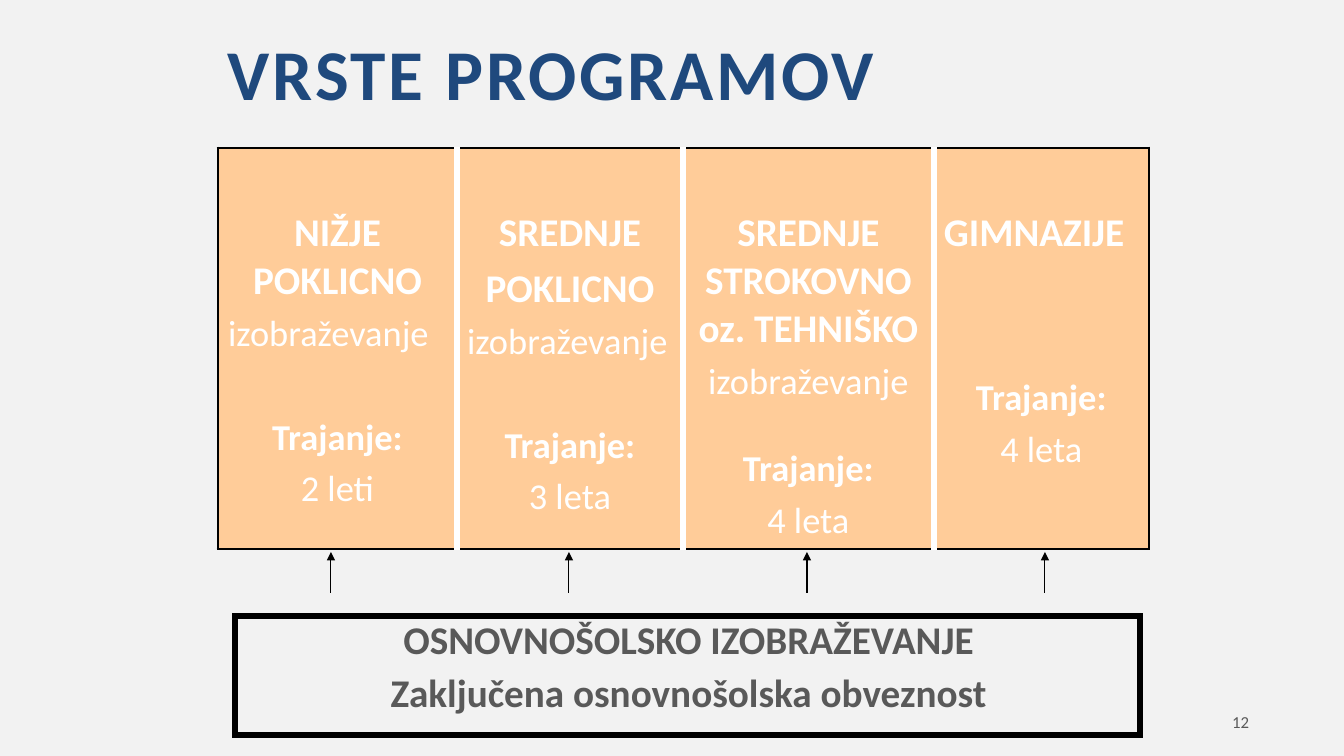
from lxml.etree import SubElement
from pptx import Presentation
from pptx.dml.color import RGBColor
from pptx.enum.shapes import MSO_CONNECTOR as Connector
from pptx.enum.text import MSO_ANCHOR as Anchor, PP_ALIGN as Align
from pptx.oxml.ns import qn
from pptx.util import Emu, Pt

COLORS = {"back": "F2F2F2", "title": "1F497D", "peach": "FFCC99",
          "white": "FFFFFF", "black": "000000", "gray": "595959"}
FONT = "Calibri"

HEAD = {"size": 28, "bold": True, "before": 8}
KIND = {"size": 26, "before": 7}
LABEL = {"size": 26, "bold": True}
YEARS = {"size": 26, "before": 7}
LEFT = {"align": Align.LEFT}

PROGRAMS = [
    (239, [("NIŽJE POKLICNO", HEAD), ("izobraževanje", KIND | LEFT),
           ("Trajanje:", LABEL | {"before": 59}), ("2 leti", YEARS)]),
    (226, [("SREDNJE", HEAD), ("POKLICNO", HEAD), ("izobraževanje", KIND | LEFT),
           ("Trajanje:", LABEL | {"before": 59}), ("3 leta", YEARS)]),
    (251, [("SREDNJE STROKOVNO oz. TEHNIŠKO", HEAD), ("izobraževanje", KIND),
           ("Trajanje:", LABEL | {"before": 43}), ("4 leta", YEARS)]),
    (215, [("GIMNAZIJE", HEAD | LEFT),
           ("Trajanje:", LABEL | {"before": 119}), ("4 leta", YEARS)]),
]
TITLE = [("VRSTE PROGRAMOV", LEFT | {"size": 51, "bold": True, "color": "title",
                                     "line": 0.9, "spacing": 200})]
BASIS_STYLE = {"size": 28, "bold": True, "color": "gray", "line": 0.9}
BASIS = [("OSNOVNOŠOLSKO IZOBRAŽEVANJE", BASIS_STYLE),
         ("Zaključena osnovnošolska obveznost", BASIS_STYLE | {"before": 10})]
NUMBER = [("12", {"size": 12, "color": "gray", "align": Align.RIGHT})]

TEXT_BOXES = [
    ((218, 30, 907, 110), TITLE, {"margin_top": 9}),
    ((228, 616, 921, 107), BASIS, {"margin_top": 5}),
    ((949, 703, 310, 38), NUMBER, {"vertical_anchor": Anchor.MIDDLE}),
]
PROGRAMS_AT = (218, 148, 931, 401)
BASIS_AT = (235, 616, 905, 119)
ARROW_START, ARROW_STEP, ARROW_FROM, ARROW_TO = 331, 238, 593, 552


def px(length):
    return Emu(round(length * 914400 / 100.8))


def rgb(name):
    return RGBColor.from_string(COLORS[name])


def write(frame, lines):
    frame.word_wrap = True
    for index, (words, style) in enumerate(lines):
        line = frame.add_paragraph() if index else frame.paragraphs[0]
        line.alignment = style.get("align", Align.CENTER)
        line.space_before = px(style.get("before", 0) if index else 0)
        line.line_spacing = style.get("line", 1.0)
        run = line.add_run()
        run.text = words
        values = {"name": FONT, "size": Pt(style["size"]), "bold": style.get("bold", False)}
        for key, value in values.items():
            setattr(run.font, key, value)
        run.font.color.rgb = rgb(style.get("color", "white"))
        if "spacing" in style:
            run.font._element.set("spc", str(style["spacing"]))


def add_plain_table(slide, place, widths):
    table = slide.shapes.add_table(1, len(widths), *map(px, place)).table
    table.first_row = table.horz_banding = False
    for column, width in zip(table.columns, widths):
        column.width = px(width)
    return table


def add_borders(cell, **sides):
    properties = cell._tc.get_or_add_tcPr()
    for side in "LRTB":
        color, points = sides[side]
        border = SubElement(properties, qn(f"a:ln{side}"), w=str(Pt(points)))
        fill = SubElement(border, qn("a:solidFill"))
        SubElement(fill, qn("a:srgbClr"), val=COLORS[color])


def add_text(slide, place, lines, frame_values):
    frame = slide.shapes.add_textbox(*map(px, place)).text_frame
    for key, value in frame_values.items():
        setattr(frame, key, px(value) if key == "margin_top" else value)
    write(frame, lines)


def add_programs(slide):
    table = add_plain_table(slide, PROGRAMS_AT, [width for width, _ in PROGRAMS])
    outer, inner = ("black", 2.25), ("white", 4.5)
    last = len(PROGRAMS) - 1
    for index, (_, lines) in enumerate(PROGRAMS):
        cell = table.cell(0, index)
        add_borders(cell, L=inner if index else outer,
                    R=inner if index < last else outer, T=outer, B=outer)
        cell.fill.solid()
        cell.fill.fore_color.rgb = rgb("peach")
        cell.margin_top, cell.margin_bottom = px(61), 0
        write(cell.text_frame, lines)


def add_basis_frame(slide):
    cell = add_plain_table(slide, BASIS_AT, [BASIS_AT[2]]).cell(0, 0)
    add_borders(cell, **dict.fromkeys("LRTB", ("black", 4.5)))
    cell.fill.background()


def add_arrow(slide, x):
    arrow = slide.shapes.add_connector(
        Connector.STRAIGHT, px(x), px(ARROW_FROM), px(x), px(ARROW_TO))
    arrow.line.color.rgb = rgb("black")
    arrow.line.width = Pt(0.75)
    SubElement(arrow.line._get_or_add_ln(), qn("a:tailEnd"), type="triangle")
    SubElement(arrow._element.spPr, qn("a:effectLst"))


def main():
    deck = Presentation()
    deck.slide_width, deck.slide_height = px(1344), px(756)
    slide = deck.slides.add_slide(deck.slide_layouts[6])
    slide.background.fill.solid()
    slide.background.fill.fore_color.rgb = rgb("back")
    add_programs(slide)
    for text_box in TEXT_BOXES:
        add_text(slide, *text_box)
    add_basis_frame(slide)
    for index in range(len(PROGRAMS)):
        add_arrow(slide, ARROW_START + index * ARROW_STEP)
    deck.save("out.pptx")


if __name__ == "__main__":
    main()
